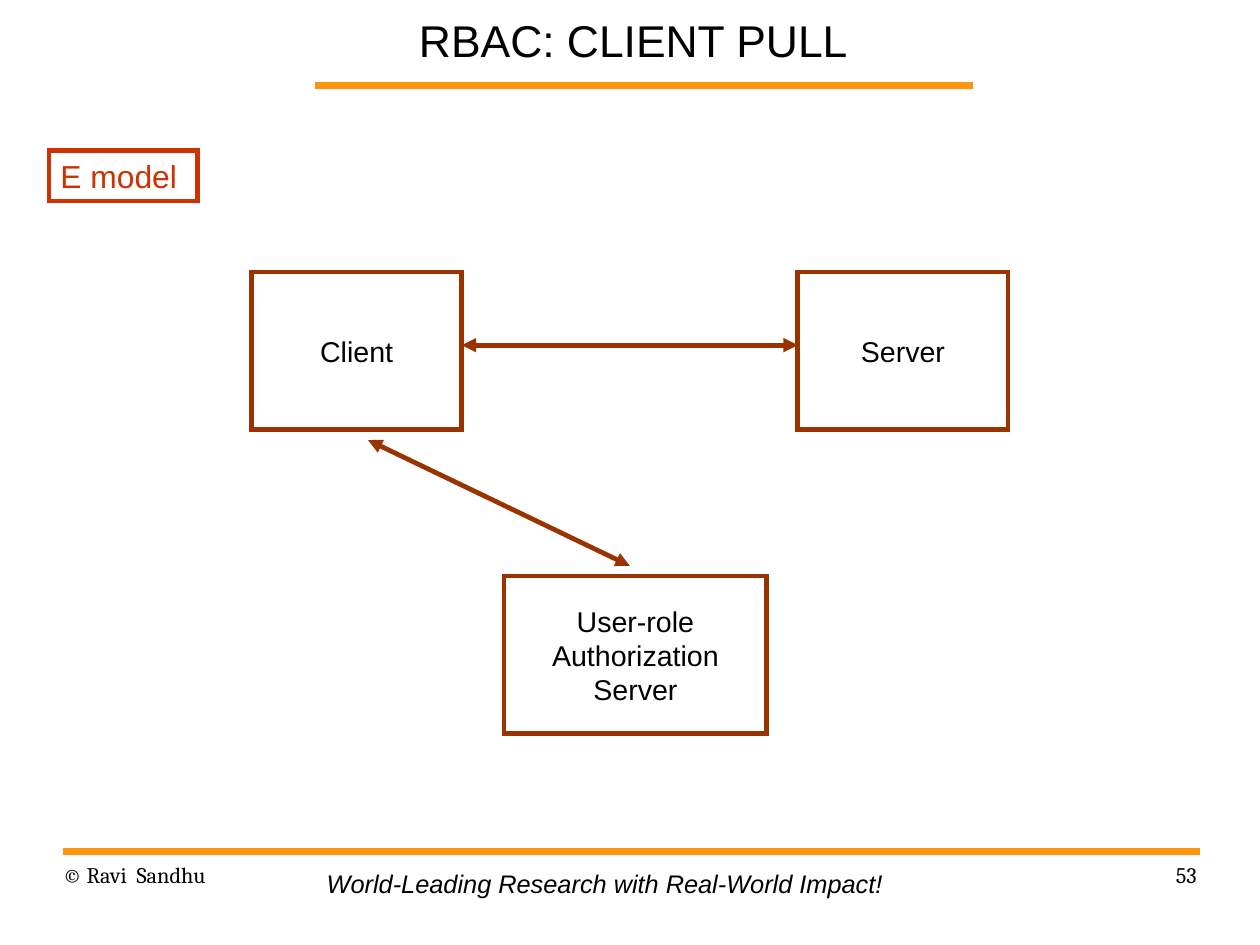
from dataclasses import dataclass

from lxml import etree
from pptx import Presentation
from pptx import util as u
from pptx.dml.color import RGBColor
from pptx.enum import shapes, text
from pptx.oxml import ns


@dataclass(frozen=True)
class Theme:
    ink: str = "000000"
    rule: str = "FF950E"
    diagram: str = "993300"
    tag: str = "CC3300"
    sans: str = "Arial"
    serif: str = "Cambria"
    title_size: int = 28
    tag_size: int = 20
    node_size: int = 18
    tagline_size: int = 16
    footer_size: int = 14
    rule_width: float = 4.31
    outline_width: int = 3


theme = Theme()
LEFT, CENTER, RIGHT = text.PP_ALIGN.LEFT, text.PP_ALIGN.CENTER, text.PP_ALIGN.RIGHT
TOP, MIDDLE, BOTTOM = text.MSO_ANCHOR.TOP, text.MSO_ANCHOR.MIDDLE, text.MSO_ANCHOR.BOTTOM


def write(part, words, size, align=LEFT, anchor=TOP, inset=(0.1, 0.05),
          color=theme.ink, face=theme.sans, wrap=True):
    frame = part.text_frame
    frame.text = words
    frame.auto_size = text.MSO_AUTO_SIZE.NONE
    frame.word_wrap = wrap
    frame.vertical_anchor = anchor
    frame.margin_left = frame.margin_right = u.Inches(inset[0])
    frame.margin_top = frame.margin_bottom = u.Inches(inset[1])
    for paragraph in frame.paragraphs:
        paragraph.alignment = align
        paragraph.font.size = u.Pt(size)
        paragraph.font.name = face
        paragraph.font.color.rgb = RGBColor.from_string(color)
    return frame


def connect(start, end, color, width, arrows=False):
    link = slide.shapes.add_connector(
        shapes.MSO_CONNECTOR.STRAIGHT, *map(u.Inches, start + end))
    link.line.color.rgb = RGBColor.from_string(color)
    link.line.width = u.Pt(width)
    if arrows:
        outline = link.line._get_or_add_ln()
        for tip in ("a:headEnd", "a:tailEnd"):
            etree.SubElement(outline, ns.qn(tip), type="triangle")
    etree.SubElement(link._element.spPr, ns.qn("a:effectLst"))


deck = Presentation()
deck.slide_width = u.Cm(28)
deck.slide_height = u.Cm(21)
slide = deck.slides.add_slide(deck.slide_layouts[5])

connect((2.76, 0.75), (8.51, 0.75), theme.rule, theme.rule_width)
connect((0.55, 7.45), (10.5, 7.45), theme.rule, theme.rule_width)

title = slide.shapes.title
title.left, title.top, title.width, title.height = map(u.Inches, (3.06, 0, 4.96, 0.63))
write(title, "RBAC: CLIENT PULL", theme.title_size, CENTER, BOTTOM, (0.11, 0.05))

for words, left, align in (("© Ravi  Sandhu", 0.55, LEFT), ("53", 7.9, RIGHT)):
    footer = slide.shapes.add_textbox(*map(u.Inches, (left, 7.53, 2.57, 0.57)))
    frame = write(footer, words, theme.footer_size, align, inset=(0, 0), face=theme.serif)
    frame.paragraphs[0].line_spacing = 1.01

tagline = slide.shapes.add_textbox(*map(u.Inches, (2.76, 7.55, 5.18, 0.37)))
frame = write(tagline, "World-Leading Research with Real-World Impact!",
              theme.tagline_size, wrap=False)
frame.paragraphs[0].font.italic = True

tag_style = dict(size=theme.tag_size, color=theme.tag)
node_style = dict(size=theme.node_size, align=CENTER, anchor=MIDDLE,
                  inset=(0.11, 0.06), wrap=False)
boxes = (
    ("E model", (0.43, 1.32, 1.3, 0.44), theme.tag, tag_style),
    ("Client", (2.2, 2.38, 1.84, 1.38), theme.diagram, node_style),
    ("Server", (6.98, 2.38, 1.84, 1.38), theme.diagram, node_style),
    ("User-role\nAuthorization\nServer", (4.41, 5.04, 2.3, 1.38), theme.diagram, node_style),
)
for words, place, outline_color, style in boxes:
    box = slide.shapes.add_shape(shapes.MSO_SHAPE.RECTANGLE, *map(u.Inches, place))
    box.shadow.inherit = False
    box.fill.background()
    box.line.color.rgb = RGBColor.from_string(outline_color)
    box.line.width = u.Pt(theme.outline_width)
    etree.SubElement(box.line._get_or_add_ln(), ns.qn("a:miter"), lim="800000")
    write(box, words, **style)

for start, end in (((4.04, 3.02), (6.98, 3.02)), ((5.51, 4.95), (3.22, 3.85))):
    connect(start, end, theme.diagram, theme.outline_width, arrows=True)

deck.save("out.pptx")
